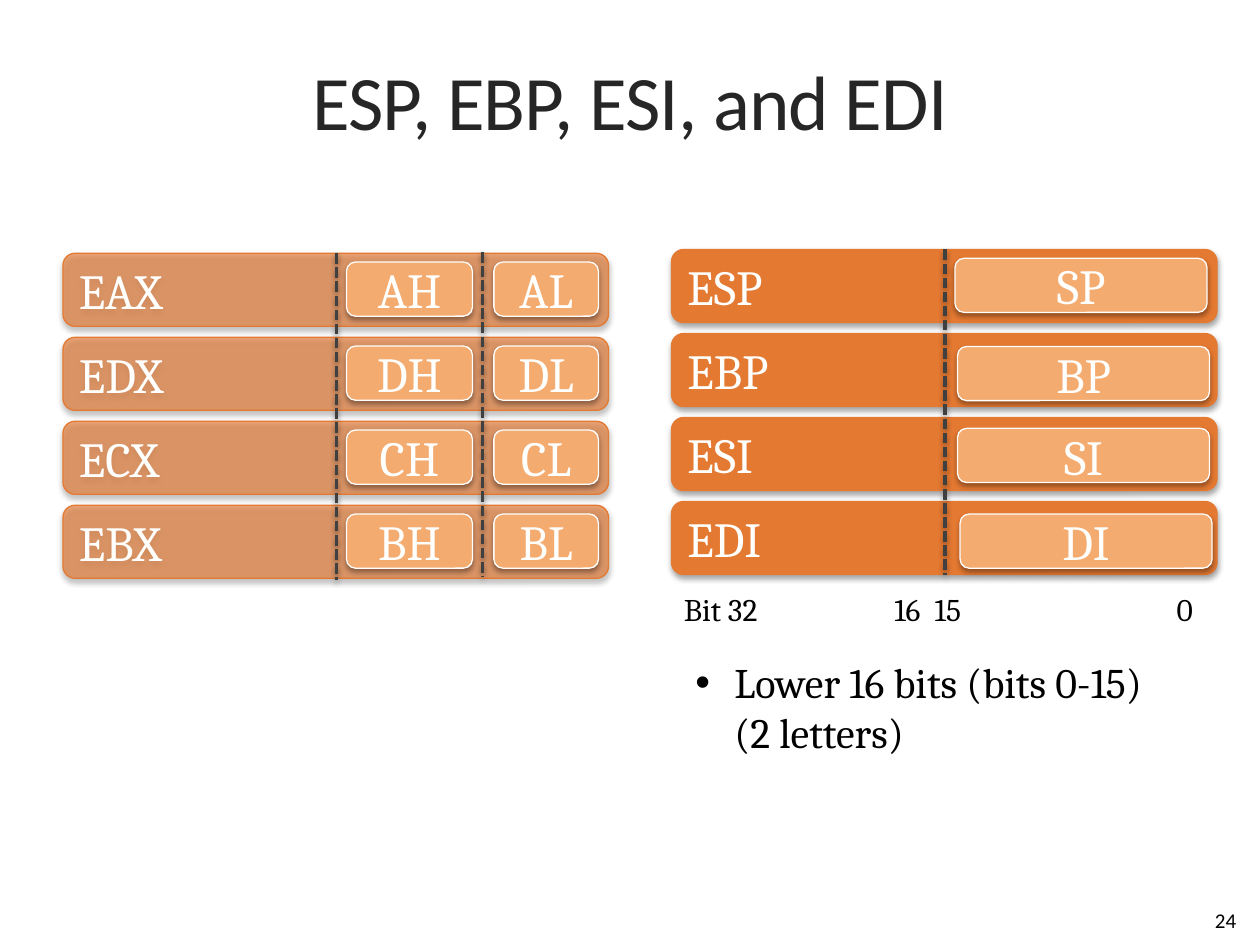
from lxml import etree
from pptx import Presentation
from pptx.dml.color import RGBColor
from pptx.enum.dml import MSO_LINE
from pptx.enum.shapes import MSO_CONNECTOR, MSO_SHAPE
from pptx.enum.text import MSO_ANCHOR, MSO_AUTO_SIZE, PP_ALIGN
from pptx.oxml.ns import qn
from pptx.util import Inches, Pt

ROUNDED, STRAIGHT = MSO_SHAPE.ROUNDED_RECTANGLE, MSO_CONNECTOR.STRAIGHT
LEFT, CENTER, RIGHT = PP_ALIGN.LEFT, PP_ALIGN.CENTER, PP_ALIGN.RIGHT
MIDDLE, TOP = MSO_ANCHOR.MIDDLE, MSO_ANCHOR.TOP
GROW, DASH = MSO_AUTO_SIZE.SHAPE_TO_FIT_TEXT, MSO_LINE.SQUARE_DOT

ORANGE = RGBColor(0xE4, 0x79, 0x32)
PEACH = RGBColor(0xF4, 0xAB, 0x70)
WHITE = RGBColor(0xFF, 0xFF, 0xFE)
BLACK = RGBColor(0x00, 0x00, 0x00)
DARK = RGBColor(0x26, 0x26, 0x26)
GRAY = RGBColor(0x40, 0x40, 0x40)

ROW_PITCH = 2 / 3
BAR_W, BAR_H, FIELD_H = 4.33, 0.58, 0.43


def add_xml(parent, tag, **attrs):
    return etree.SubElement(parent, qn(tag), {k: str(v) for k, v in attrs.items()})


class RegisterSlide:
    heading_font, body_font = "Calibri", "Cambria"

    def __init__(self, prs):
        self.s = prs.slides.add_slide(prs.slide_layouts[5])

    def style(self, p, size, color, align=LEFT, font=None):
        p.alignment = align
        for r in p.runs:
            r.font.size, r.font.name = Pt(size), font or self.body_font
            r.font.color.rgb = color

    def shadow(self, sp, alpha, dist):
        spPr = sp._element.spPr
        for old in spPr.findall(qn("a:effectLst")):
            spPr.remove(old)
        effect = add_xml(spPr, "a:effectLst")
        outer = add_xml(effect, "a:outerShdw", blurRad=Pt(3.1), dist=Pt(dist),
                        dir=5400000, rotWithShape=0)
        add_xml(add_xml(outer, "a:srgbClr", val="000000"), "a:alpha", val=alpha * 1000)

    def title(self, text):
        sp = self.s.shapes.title
        sp.left, sp.top, sp.width, sp.height = map(Inches, (0.5, 0.17, 9, 1.25))
        tf = sp.text_frame
        tf.text = text
        tf.margin_left = tf.margin_right = 0
        tf.vertical_anchor = MIDDLE
        p = tf.paragraphs[0]
        self.style(p, 44, DARK, CENTER, self.heading_font)
        p.runs[0]._r.get_or_add_rPr().set("spc", "-50")

    def box(self, x, y, w, h, text, fill, line, align=LEFT, opacity=100):
        sp = self.s.shapes.add_shape(ROUNDED, *map(Inches, (x, y, w, h)))
        sp.fill.solid()
        sp.fill.fore_color.rgb = fill
        if opacity < 100:
            color = sp._element.spPr.find(qn("a:solidFill"))[0]
            add_xml(color, "a:alpha", val=opacity * 1000)
        sp.line.color.rgb, sp.line.width = line, Pt(0.75)
        self.shadow(sp, 35, 1.8)
        sp.text_frame.text = text
        sp.text_frame.vertical_anchor = MIDDLE
        self.style(sp.text_frame.paragraphs[0], 28, WHITE, align)

    def bar(self, x, y, text, opacity=100):
        self.box(x, y, BAR_W, BAR_H, text, ORANGE, ORANGE, opacity=opacity)

    def field(self, x, y, w, text):
        self.box(x, y, w, FIELD_H, text, PEACH, WHITE, CENTER)

    def divider(self, x, top, bottom):
        ln = self.s.shapes.add_connector(STRAIGHT, *map(Inches, (x, top, x, bottom)))
        ln.line.color.rgb, ln.line.width = GRAY, Pt(2)
        ln.line.dash_style = DASH
        self.shadow(ln, 38, 1.6)

    def text(self, x, y, w, h, text, size, align=LEFT, font=None, anchor=TOP):
        tf = self.s.shapes.add_textbox(*map(Inches, (x, y, w, h))).text_frame
        tf.word_wrap, tf.vertical_anchor = True, anchor
        if anchor == TOP:
            tf.auto_size = GROW
        p = tf.paragraphs[0]
        p.text = text
        self.style(p, size, BLACK, align, font)
        return p

    def tabbed(self, x, y, w, h, labels, stops, size):
        p = self.text(x, y, w, h, "\t".join(labels), size)
        tabs = add_xml(p._p.get_or_add_pPr(), "a:tabLst")
        for stop in stops:
            add_xml(tabs, "a:tab", pos=Inches(stop), algn="l")

    def bullet(self, x, y, w, h, text, size):
        pPr = self.text(x, y, w, h, text, size)._p.get_or_add_pPr()
        pPr.set("marL", str(Inches(0.31)))
        pPr.set("indent", str(Inches(-0.31)))
        add_xml(pPr, "a:buFont", typeface="Arial")
        add_xml(pPr, "a:buChar", char="•")


def main():
    prs = Presentation()
    prs.slide_width, prs.slide_height = Inches(10), Inches(7.5)
    slide = RegisterSlide(prs)
    slide.title("ESP, EBP, ESI, and EDI")
    slide.text(7.58, 7.1, 2.33, 0.4, "24", 12, RIGHT, slide.heading_font, MIDDLE)

    # General registers, split into high and low bytes
    for i, letter in enumerate("ADCB"):
        y = 2.01 + i * ROW_PITCH
        slide.bar(0.5, y, f"E{letter}X", opacity=65)
        slide.field(2.75, y + 0.07, 1, f"{letter}H")
        slide.field(3.92, y + 0.07, 0.83, f"{letter}L")
    slide.divider(2.67, 2.01, 4.6)
    slide.divider(3.83, 2, 4.58)

    # Pointer and index registers with their lower halves
    halves = [("SP", 7.58, 2.05), ("BP", 7.6, 2.75), ("SI", 7.6, 3.4), ("DI", 7.62, 4.08)]
    for i, (name, x, y) in enumerate(halves):
        slide.bar(5.33, 1.98 + i * ROW_PITCH, f"E{name}")
        slide.field(x, y, 2, name)
    slide.divider(7.5, 1.98, 4.56)

    # Bit positions and explanation
    slide.tabbed(5.33, 4.63, 4.5, 0.4, ["Bit 32", "16", "15", "0"], [1.67, 1.99, 3.91], 18)
    slide.bullet(5.42, 5.16, 4.33, 0.91, "Lower 16 bits (bits 0-15) \n(2 letters)", 24)

    prs.save("out.pptx")


if __name__ == "__main__":
    main()
